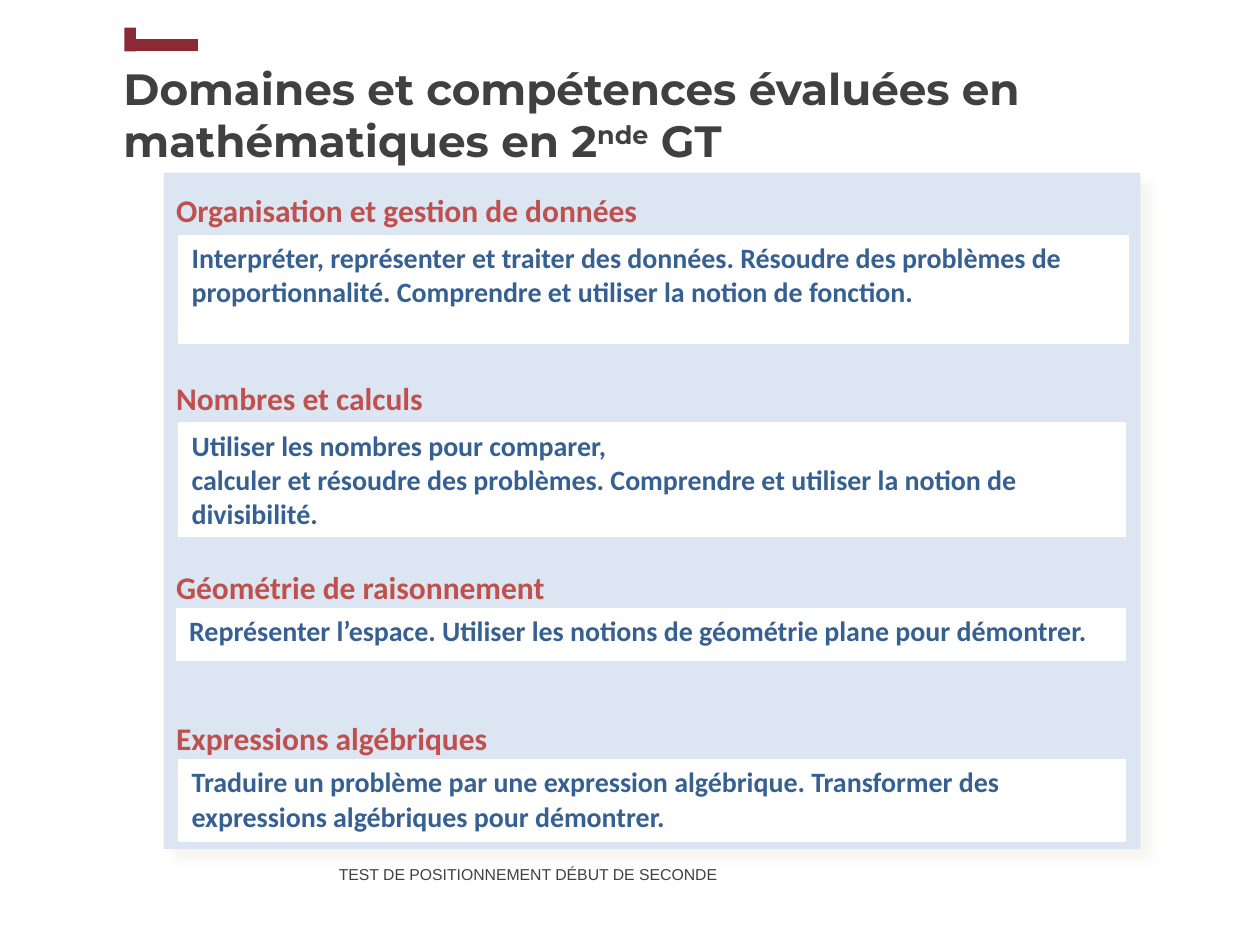
from dataclasses import dataclass

from lxml.etree import SubElement
from pptx import Presentation
from pptx.dml.color import RGBColor
from pptx.enum.shapes import MSO_SHAPE
from pptx.enum.text import MSO_ANCHOR, PP_ALIGN
from pptx.oxml.ns import qn
from pptx.util import Cm, Pt


@dataclass(frozen=True)
class Theme:
    ink: str = "404040"
    mark: str = "8B2934"
    panel: str = "DCE6F2"
    shade: str = "EEECE1"
    head: str = "C0504D"
    body: str = "376092"
    white: str = "FFFFFF"
    title_pt: int = 25
    head_pt: int = 18
    body_pt: int = 16
    foot_pt: int = 9
    title_font: str = "Montserrat"
    body_font: str = "Calibri"
    foot_font: str = "Arial"


def rgb(code):
    return RGBColor.from_string(code)


def tint(parent, code):
    """Add a solid colour element and return it."""
    return SubElement(parent, qn("a:srgbClr"), val=code)


class Page:
    def __init__(self, deck, theme):
        self.theme = theme
        self.slide = deck.slides.add_slide(deck.slide_layouts[6])
        self.shapes = self.slide.shapes

    def font(self, para, name, size, color, bold=True):
        font = para.font
        font.name, font.size, font.bold = name, Pt(size), bold
        font.color.rgb = rgb(color)

    def rect(self, box, color):
        shape = self.shapes.add_shape(MSO_SHAPE.RECTANGLE, *map(Cm, box))
        shape.shadow.inherit = False
        shape.fill.solid()
        shape.fill.fore_color.rgb = rgb(color)
        shape.line.fill.background()
        return shape

    def text(self, box, anchor):
        frame = self.shapes.add_textbox(*map(Cm, box)).text_frame
        frame.word_wrap = True
        frame.vertical_anchor = anchor
        return frame

    def title(self, box, parts):
        """Write (text, raised) parts on one paragraph."""
        look = self.theme
        para = self.text(box, MSO_ANCHOR.MIDDLE).paragraphs[0]
        self.font(para, look.title_font, look.title_pt, look.ink)
        for words, raised in parts:
            run = para.add_run()
            run.text = words
            if raised:
                run.font._element.set("baseline", "30000")

    def footer(self, box, words):
        look = self.theme
        frame = self.text(box, MSO_ANCHOR.TOP)
        frame.margin_top = Cm(0.28)
        para = frame.paragraphs[0]
        para.text = words
        para.line_spacing = Pt(13.2)
        self.font(para, look.foot_font, look.foot_pt, look.ink, False)

    def panel(self, box, heads):
        """Draw the shaded panel with (heading, space before) pairs."""
        look = self.theme
        shape = self.rect(box, look.panel)
        effects = shape._element.spPr.find(qn("a:effectLst"))
        shade = SubElement(effects, qn("a:outerShdw"), blurRad=str(Pt(5)),
                           dist=str(Pt(8.5)), dir="2700000", algn="tl")
        SubElement(tint(shade, look.shade), qn("a:alpha"), val="50000")
        frame = shape.text_frame
        frame.word_wrap = True
        frame.vertical_anchor = MSO_ANCHOR.TOP
        frame.margin_top = Cm(0.37)
        for i, (words, gap) in enumerate(heads):
            para = frame.add_paragraph() if i else frame.paragraphs[0]
            para.text = words
            para.alignment = PP_ALIGN.LEFT
            para.space_before = Pt(gap)
            self.font(para, look.body_font, look.head_pt, look.head)

    def table(self, box, lines, edged=False):
        look = self.theme
        table = self.shapes.add_table(1, 1, *map(Cm, box)).table
        table.first_row = table.horz_banding = False
        cell = table.cell(0, 0)
        cell.text = "\n".join(lines)
        for para in cell.text_frame.paragraphs:
            self.font(para, look.body_font, look.body_pt, look.body)
        if edged:
            self.edge(cell)
        cell.fill.solid()
        cell.fill.fore_color.rgb = rgb(look.white)

    def edge(self, cell):
        """Add white borders, with a thicker one below."""
        props = cell._tc.get_or_add_tcPr()
        for side, width in (("L", 1), ("R", 1), ("T", 1), ("B", 3)):
            line = SubElement(props, qn(f"a:ln{side}"), w=str(Pt(width)))
            tint(SubElement(line, qn("a:solidFill")), self.theme.white)


def main():
    deck = Presentation()
    deck.slide_width, deck.slide_height = Cm(25.4), Cm(19.05)
    theme = Theme()
    page = Page(deck, theme)

    page.footer((6.58, 17.07, 9.86, 1.88),
                "TEST DE POSITIONNEMENT DÉBUT DE SECONDE")
    page.title((2.24, 0.51, 21.89, 3.58), [
        ("Domaines et compétences évaluées en mathématiques en 2", False),
        ("nde", True),
        (" GT", False),
    ])
    for box in ((2.51, 0.56, 0.23, 0.48), (2.62, 0.79, 1.37, 0.24)):
        page.rect(box, theme.mark)

    page.panel((3.3, 3.48, 19.69, 13.64), [
        ("Organisation et gestion de données", 0),
        ("Nombres et calculs", 86),
        ("Géométrie de raisonnement", 86),
        ("Expressions algébriques", 65),
    ])
    page.table((3.61, 4.75, 19.13, 2.16), [
        "Interpréter, représenter et traiter des données. Résoudre des "
        "problèmes de proportionnalité. Comprendre et utiliser la notion "
        "de fonction."])
    page.table((3.61, 8.53, 19.08, 2.29), [
        "Utiliser les nombres pour comparer,",
        "calculer et résoudre des problèmes. Comprendre et utiliser la "
        "notion de divisibilité."])
    page.table((3.56, 12.27, 19.13, 1.04), [
        "Représenter l’espace. Utiliser les notions de géométrie plane "
        "pour démontrer."])
    page.table((3.61, 15.32, 19.08, 1.6), [
        "Traduire un problème par une expression algébrique. Transformer "
        "des expressions algébriques pour démontrer."], edged=True)

    deck.save("out.pptx")


if __name__ == "__main__":
    main()
